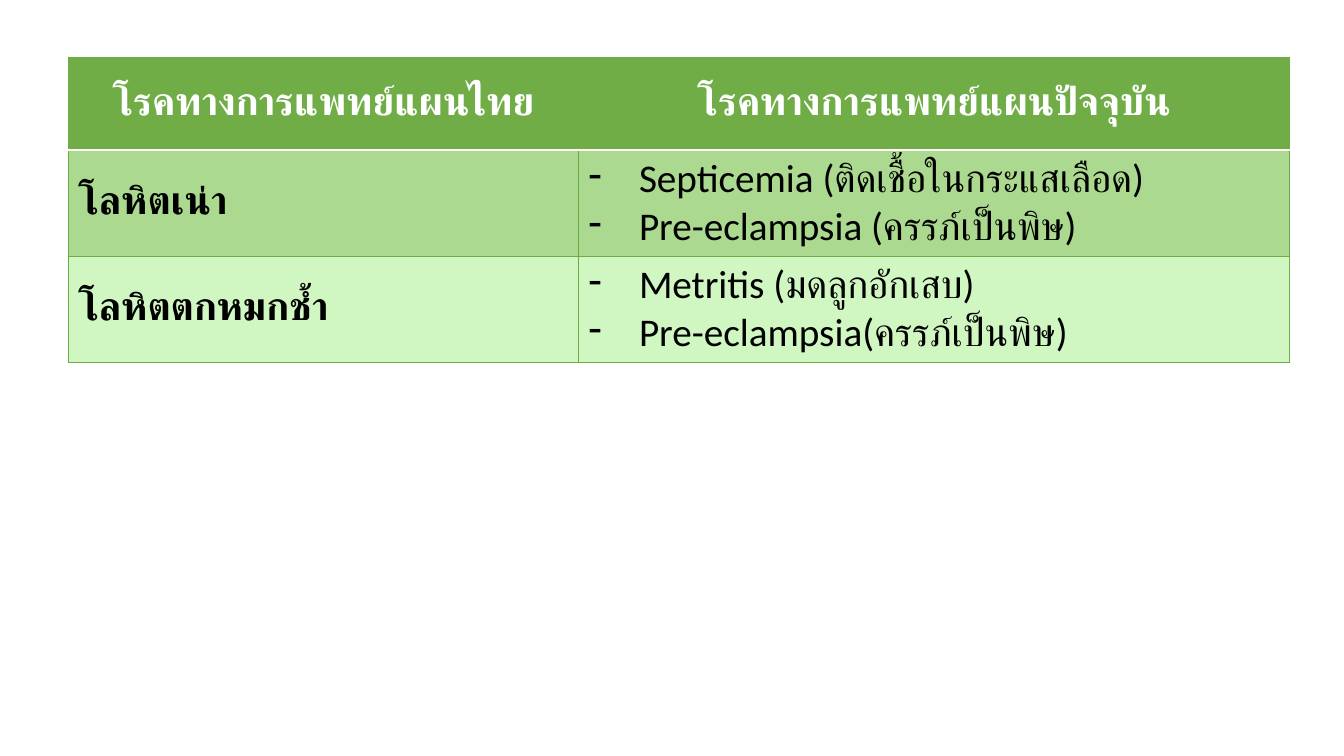
from dataclasses import dataclass

from lxml import etree
from pptx import Presentation, util as u
from pptx.dml.color import RGBColor
from pptx.enum import text
from pptx.oxml import ns
from pptx.table import Table, _Cell

EMU_PER_PX = 9525


@dataclass(frozen=True)
class Theme:
    font: str = "Calibri"
    size: int = 28
    white: str = "FFFFFF"
    black: str = "000000"
    header: str = "70AD47"
    bands: tuple[str, str] = ("AAD98F", "D0F6C2")
    border: str = "6DAC43"
    thin: float = 0.75
    thick: float = 2


@dataclass(frozen=True)
class Disease:
    thai_name: str
    modern_names: tuple[str, ...]


THEME = Theme()
HEADINGS = ("โรคทางการแพทย์แผนไทย", "โรคทางการแพทย์แผนปัจจุบัน")
DISEASES = (
    Disease("โลหิตเน่า", ("Septicemia (ติดเชื้อในกระแสเลือด)", "Pre-eclampsia (ครรภ์เป็นพิษ)")),
    Disease("โลหิตตกหมกช้ำ", ("Metritis (มดลูกอักเสบ)", "Pre-eclampsia(ครรภ์เป็นพิษ)")),
)
LEFT, TOP = 65, 55
COLUMN_WIDTHS = (486, 677)
HEADER_HEIGHT, ROW_HEIGHT = 88, 101
INDENT = 48


def px(length: int) -> u.Emu:
    return u.Emu(length * EMU_PER_PX)


def add_child(parent, tag: str, **attributes: str):
    return etree.SubElement(parent, ns.qn(tag), attributes)


def set_border(cell: _Cell, side: str, color: str, width: float) -> None:
    properties = cell._tc.get_or_add_tcPr()
    line = add_child(properties, f"a:ln{side}", w=str(u.Pt(width)))
    add_child(add_child(line, "a:solidFill"), "a:srgbClr", val=color)


def set_bullet(paragraph) -> None:
    properties = paragraph._p.get_or_add_pPr()
    properties.set("marL", str(px(INDENT)))
    properties.set("indent", str(px(-INDENT)))
    add_child(add_child(properties, "a:buClr"), "a:srgbClr", val=THEME.black)
    add_child(properties, "a:buFontTx")
    add_child(properties, "a:buChar", char="-")


def style_cell(cell: _Cell, fill: str, top: tuple[str, float], bottom: tuple[str, float]) -> None:
    thin = (THEME.border, THEME.thin)
    for side, border in zip("LRTB", (thin, thin, top, bottom)):
        set_border(cell, side, *border)
    cell.fill.solid()
    cell.fill.fore_color.rgb = RGBColor.from_string(fill)
    cell.vertical_anchor = text.MSO_ANCHOR.MIDDLE


def write_cell(cell: _Cell, lines: tuple[str, ...], color: str, bold: bool,
               centered: bool = False, bulleted: bool = False) -> None:
    frame = cell.text_frame
    for index, line in enumerate(lines):
        paragraph = frame.add_paragraph() if index else frame.paragraphs[0]
        paragraph.alignment = text.PP_ALIGN.CENTER if centered else text.PP_ALIGN.LEFT
        if bulleted:
            set_bullet(paragraph)
        run = paragraph.add_run()
        run.text = line
        run.font.name = THEME.font
        run.font.size = u.Pt(THEME.size)
        run.font.bold = bold
        run.font.color.rgb = RGBColor.from_string(color)


def fill_table(table: Table) -> None:
    thin, divider = (THEME.border, THEME.thin), (THEME.white, THEME.thick)
    for column, heading in enumerate(HEADINGS):
        cell = table.cell(0, column)
        style_cell(cell, THEME.header, thin, divider)
        write_cell(cell, (heading,), THEME.white, bold=True, centered=True)
    for row, (disease, band) in enumerate(zip(DISEASES, THEME.bands), start=1):
        name, matches = table.rows[row].cells
        for cell in (name, matches):
            style_cell(cell, band, divider if row == 1 else thin, thin)
        write_cell(name, (disease.thai_name,), THEME.black, bold=True)
        write_cell(matches, disease.modern_names, THEME.black, bold=False, bulleted=True)


def main() -> None:
    presentation = Presentation()
    presentation.slide_width, presentation.slide_height = px(1280), px(720)
    slide = presentation.slides.add_slide(presentation.slide_layouts[6])
    heights = (HEADER_HEIGHT,) + (ROW_HEIGHT,) * len(DISEASES)
    table = slide.shapes.add_table(
        len(heights), len(COLUMN_WIDTHS), px(LEFT), px(TOP),
        px(sum(COLUMN_WIDTHS)), px(sum(heights))).table
    table.horz_banding = False
    for column, width in zip(table.columns, COLUMN_WIDTHS):
        column.width = px(width)
    for row, height in zip(table.rows, heights):
        row.height = px(height)
    fill_table(table)
    presentation.save("out.pptx")


if __name__ == "__main__":
    main()
